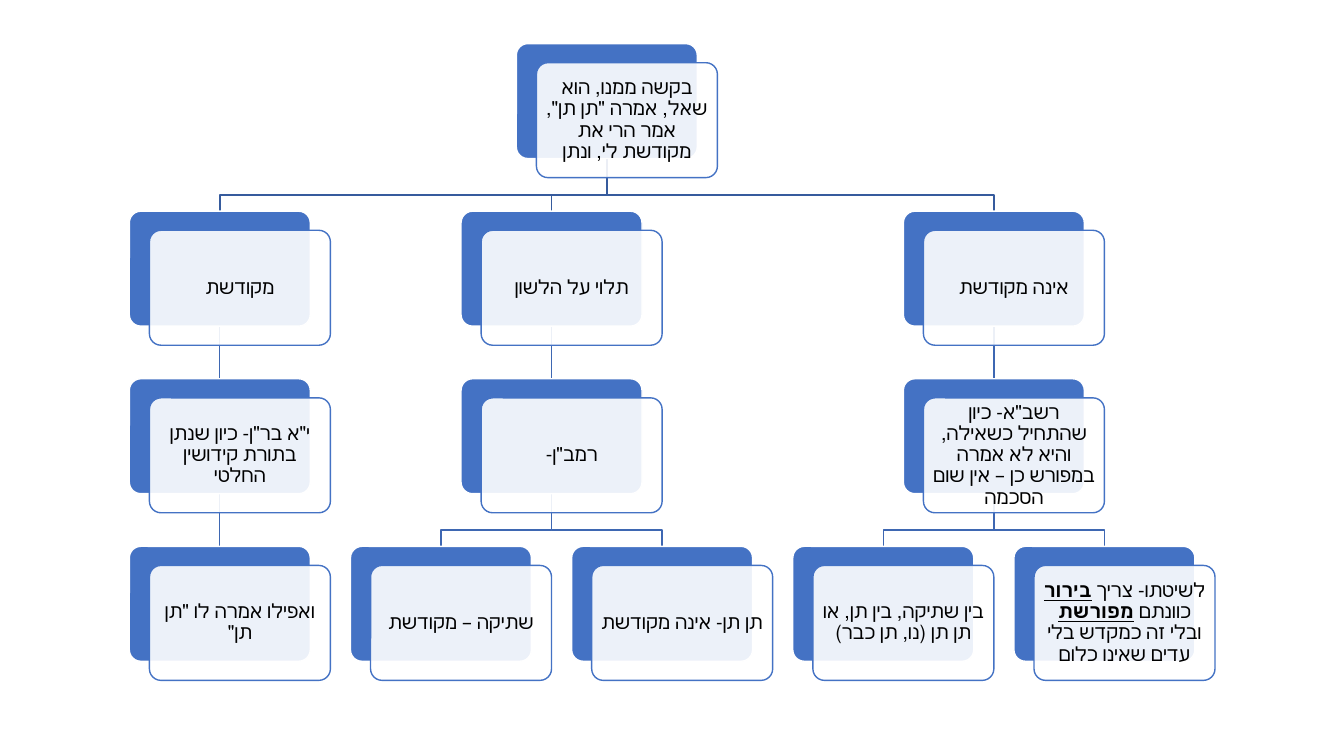
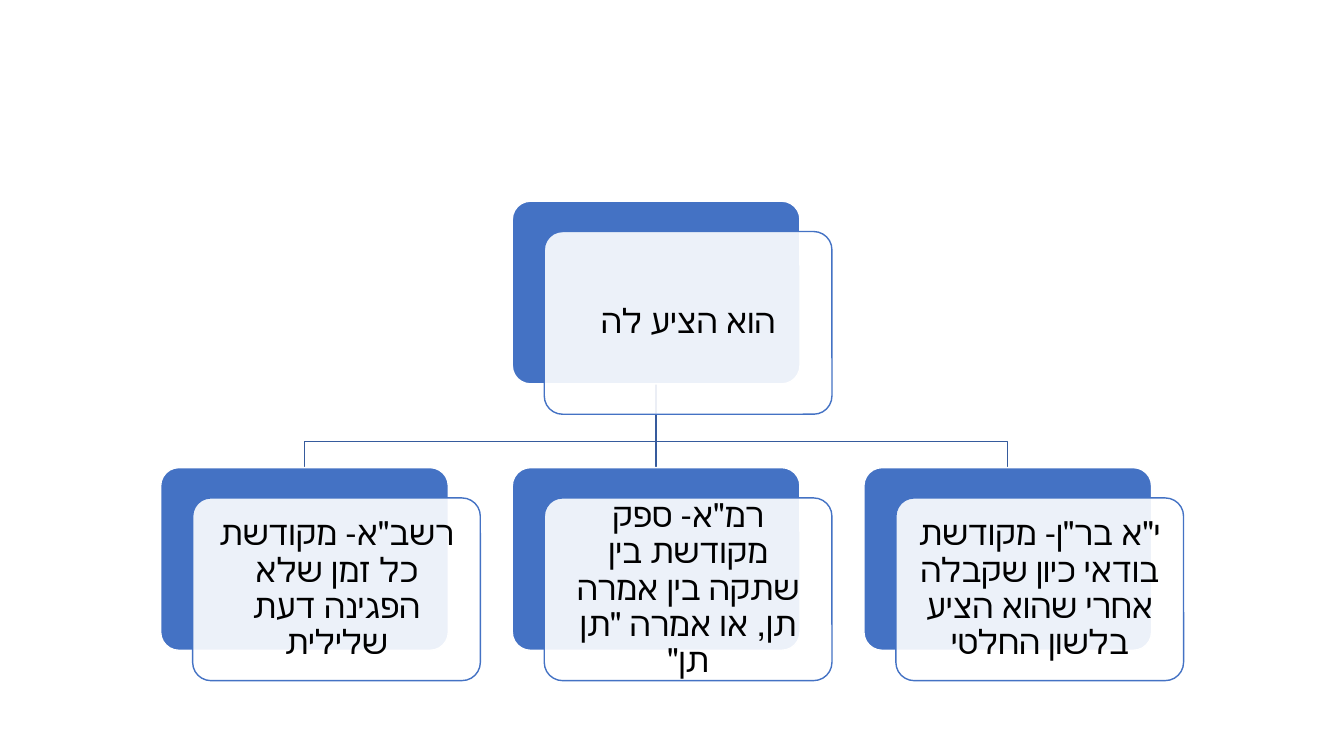
"""Build two right-to-left decision trees made of layered cards."""
from lxml.etree import SubElement
from pptx import Presentation
from pptx.dml.color import RGBColor
from pptx.enum.lang import MSO_LANGUAGE_ID as Language
from pptx.enum.shapes import MSO_CONNECTOR as Connector, MSO_SHAPE as Shape
from pptx.enum.text import MSO_ANCHOR as Anchor, PP_ALIGN as Align
from pptx.oxml.ns import qn
from pptx.util import Cm, Pt

COLORS = {"card": "4472C4", "white": "FFFFFF", "text": "000000",
          "root_link": "365B9D", "link": "3E67B2"}
FONT, HEBREW_FONT = "Calibri", "+mn-cs"
COLUMN_PITCH, ROW_PITCH, CARD_HEIGHT = 11 / 9, 0.926, 0.635
SHIFT_X, SHIFT_Y, BEND = 1 / 9, 0.1055, 0.69

TREES = [
    {"left": 3.26, "top": 1.1, "width": 4.56, "size": 14, "inset": 0.15, "nodes": [
        (1.75, 0, None, 'בקשה ממנו, הוא שאל, אמרה "תן תן", אמר הרי את מקודשת לי, ונתן'),
        (0, 1, 0, "מקודשת"),
        (0, 2, 1, 'י"א בר"ן- כיון שנתן בתורת קידושין החלטי'),
        (0, 3, 2, 'ואפילו אמרה לו "תן תן"'),
        (1.5, 1, 0, "תלוי על הלשון"),
        (1.5, 2, 4, 'רמב"ן-'),
        (1, 3, 5, "שתיקה – מקודשת"),
        (2, 3, 5, "תן תן- אינה מקודשת"),
        (3.5, 1, 0, "אינה מקודשת"),
        (3.5, 2, 8, 'רשב"א- כיון שהתחיל כשאילה, והיא לא אמרה במפורש כן – אין שום הסכמה'),
        (3, 3, 9, "בין שתיקה, בין תן, או תן תן (נו, תן כבר)"),
        (4, 3, 9, "לשיטתו- צריך *בירור* כוונתם *מפורשת* ובלי זה כמקדש בלי עדים שאינו כלום"),
    ]},
    {"left": 4.05, "top": 5.07, "width": 7.25, "size": 24, "inset": 0.25, "nodes": [
        (1, 0, None, "הוא הציע לה"),
        (0, 1, 0, 'רשב"א- מקודשת כל זמן שלא הפגינה דעת שלילית'),
        (1, 1, 0, 'רמ"א- ספק מקודשת בין שתקה בין אמרה תן, או אמרה "תן תן"'),
        (2, 1, 0, 'י"א בר"ן- מקודשת בודאי כיון שקבלה אחרי שהוא הציע בלשון החלטי'),
    ]},
]


def set_line(shape, color):
    shape.line.color.rgb = RGBColor.from_string(COLORS[color])
    shape.line.width = Pt(1)


def write_text(shape, text, size, inset):
    frame = shape.text_frame
    margins = {f"margin_{side}": Cm(inset) for side in ("left", "top", "right", "bottom")}
    for name, value in {"word_wrap": True, "vertical_anchor": Anchor.MIDDLE, **margins}.items():
        setattr(frame, name, value)
    paragraph = frame.paragraphs[0]
    paragraph.alignment = Align.CENTER
    paragraph.line_spacing = 0.9
    paragraph._p.get_or_add_pPr().set("rtl", "1")
    for index, part in enumerate(text.split("*")):
        run = paragraph.add_run()
        run.text = part
        stressed = index % 2 == 1
        formats = {"name": FONT, "size": Pt(size), "bold": stressed,
                   "underline": stressed, "language_id": Language.HEBREW}
        for name, value in formats.items():
            setattr(run.font, name, value)
        run.font.color.rgb = RGBColor.from_string(COLORS["text"])
        SubElement(run._r.get_or_add_rPr(), qn("a:cs"), typeface=HEBREW_FONT)


presentation = Presentation()
presentation.slide_width, presentation.slide_height = Cm(33.87), Cm(19.05)

for tree in TREES:
    slide = presentation.slides.add_slide(presentation.slide_layouts[6])
    width, nodes = tree["width"], tree["nodes"]
    height = width * CARD_HEIGHT
    corners = [(tree["left"] + column * width * COLUMN_PITCH,
                tree["top"] + row * width * ROW_PITCH) for column, row, _, _ in nodes]

    for (left, top), (_, row, parent, _) in zip(corners, nodes):
        if parent is None:
            continue
        parent_left, parent_top = corners[parent]
        start_x, end_x = Cm(parent_left + width / 2), Cm(left + width / 2)
        start_y, end_y = Cm(parent_top + height), Cm(top)
        if start_x == end_x:
            link = slide.shapes.add_connector(Connector.STRAIGHT, start_x, start_y, end_x, end_y)
            SubElement(link._element.spPr, qn("a:effectLst"))
        else:
            bend_y = start_y + round((end_y - start_y) * BEND)
            builder = slide.shapes.build_freeform(start_x, start_y)
            builder.add_line_segments([(start_x, bend_y), (end_x, bend_y), (end_x, end_y)], close=False)
            link = builder.convert_to_shape()
            link.fill.background()
            link.shadow.inherit = False
        set_line(link, "root_link" if row == 1 else "link")

    for (left, top), (_, _, _, text) in zip(corners, nodes):
        for layer, (fill, line) in enumerate([("card", "white"), ("white", "card")]):
            card = slide.shapes.add_shape(
                Shape.ROUNDED_RECTANGLE, Cm(left + layer * width * SHIFT_X),
                Cm(top + layer * width * SHIFT_Y), Cm(width), Cm(height))
            card.adjustments[0] = 0.1
            card.shadow.inherit = False
            card.fill.solid()
            card.fill.fore_color.rgb = RGBColor.from_string(COLORS[fill])
            set_line(card, line)
        color = card._element.spPr.find(qn("a:solidFill")).find(qn("a:srgbClr"))
        SubElement(color, qn("a:alpha"), val="90000")
        write_text(card, text, tree["size"], tree["inset"])

presentation.save("out.pptx")
